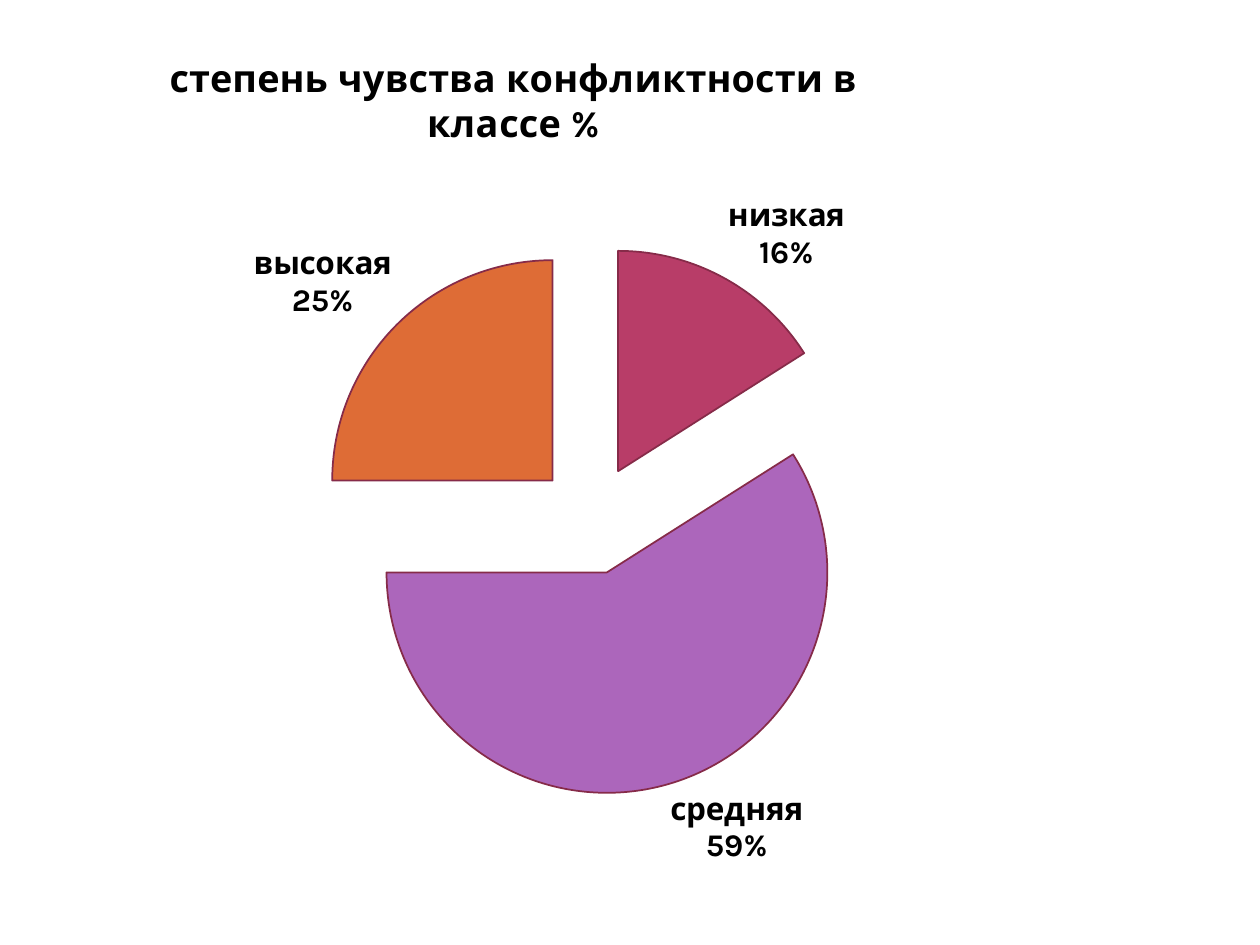
import pptx
import pptx.chart.data
import pptx.dml.color
import pptx.enum.chart
import pptx.oxml
import pptx.oxml.ns
import pptx.util

Pt = pptx.util.Pt
COLORS = {
    "text": "000000",
    "outline": "862B49",
    "low": "B83D68",
    "medium": "AC66BB",
    "high": "DE6C36",
}
FONT = "Karla"
TITLE = "степень чувства конфликтности в классе %"
LEVELS = [("низкая", 16, "low"), ("средняя", 59, "medium"), ("высокая", 25, "high")]


def color(name):
    return pptx.dml.color.RGBColor.from_string(COLORS[name])


def format_font(font, size):
    font.name = FONT
    font.size = Pt(size)
    font.bold = True
    font.color.rgb = color("text")


def make_layout(**settings):
    entries = "".join(f'<c:{tag} val="{value}"/>' for tag, value in settings.items())
    return pptx.oxml.parse_xml(
        f'<c:layout {pptx.oxml.ns.nsdecls("c")}>'
        f"<c:manualLayout>{entries}</c:manualLayout></c:layout>"
    )


def replace_layout(element, layout, index):
    for previous in element.findall(pptx.oxml.ns.qn("c:layout")):
        element.remove(previous)
    element.insert(index, layout)


def add_pie(page):
    data = pptx.chart.data.CategoryChartData()
    data.categories = [label for label, _, _ in LEVELS]
    data.add_series(TITLE, [value for _, value, _ in LEVELS])
    frame = page.shapes.add_chart(
        pptx.enum.chart.XL_CHART_TYPE.PIE, Pt(36), Pt(16.5), Pt(570), Pt(492), data
    )
    chart = frame.chart
    chart.has_legend = False
    format_font(chart.font, 18)
    return chart


def add_title(chart):
    chart.has_title = True
    paragraph = chart.chart_title.text_frame.paragraphs[0]
    paragraph.text = TITLE
    format_font(paragraph.runs[0].font, 21.6)
    title = chart.chart_title._element
    replace_layout(title, make_layout(xMode="edge", yMode="edge", x=0.1, y=0.02), 1)


def format_slices(plot):
    plot.vary_by_categories = True
    series = plot.series[0]
    for index, (_, _, name) in enumerate(LEVELS):
        area = series.points[index].format
        area.fill.solid()
        area.fill.fore_color.rgb = color(name)
        area.line.color.rgb = color("outline")
        area.line.width = Pt(1)
    explosion = pptx.oxml.parse_xml(
        f'<c:explosion {pptx.oxml.ns.nsdecls("c")} val="25"/>'
    )
    series._element.find(pptx.oxml.ns.qn("c:dPt")).addprevious(explosion)


def format_labels(plot):
    plot.has_data_labels = True
    labels = plot.data_labels
    labels.show_category_name = True
    labels.show_percentage = True
    labels.show_value = False
    labels.number_format = "0%"
    labels.number_format_is_linked = False
    labels.position = pptx.enum.chart.XL_LABEL_POSITION.OUTSIDE_END
    format_font(labels.font, 18)
    separator = pptx.oxml.parse_xml(
        f'<c:separator {pptx.oxml.ns.nsdecls("c")}>\n</c:separator>'
    )
    labels._element.find(pptx.oxml.ns.qn("c:showBubbleSize")).addnext(separator)


def place_plot(chart):
    area = chart._chartSpace.chart.plotArea
    layout = make_layout(
        layoutTarget="inner", xMode="edge", yMode="edge", x=0.25, y=0.25, w=0.56, h=0.64
    )
    replace_layout(area, layout, 0)


def main():
    deck = pptx.Presentation()
    deck.slide_width = Pt(720)
    deck.slide_height = Pt(540)
    page = deck.slides.add_slide(deck.slide_layouts[6])
    chart = add_pie(page)
    add_title(chart)
    format_slices(chart.plots[0])
    format_labels(chart.plots[0])
    place_plot(chart)
    deck.save("out.pptx")


if __name__ == "__main__":
    main()
